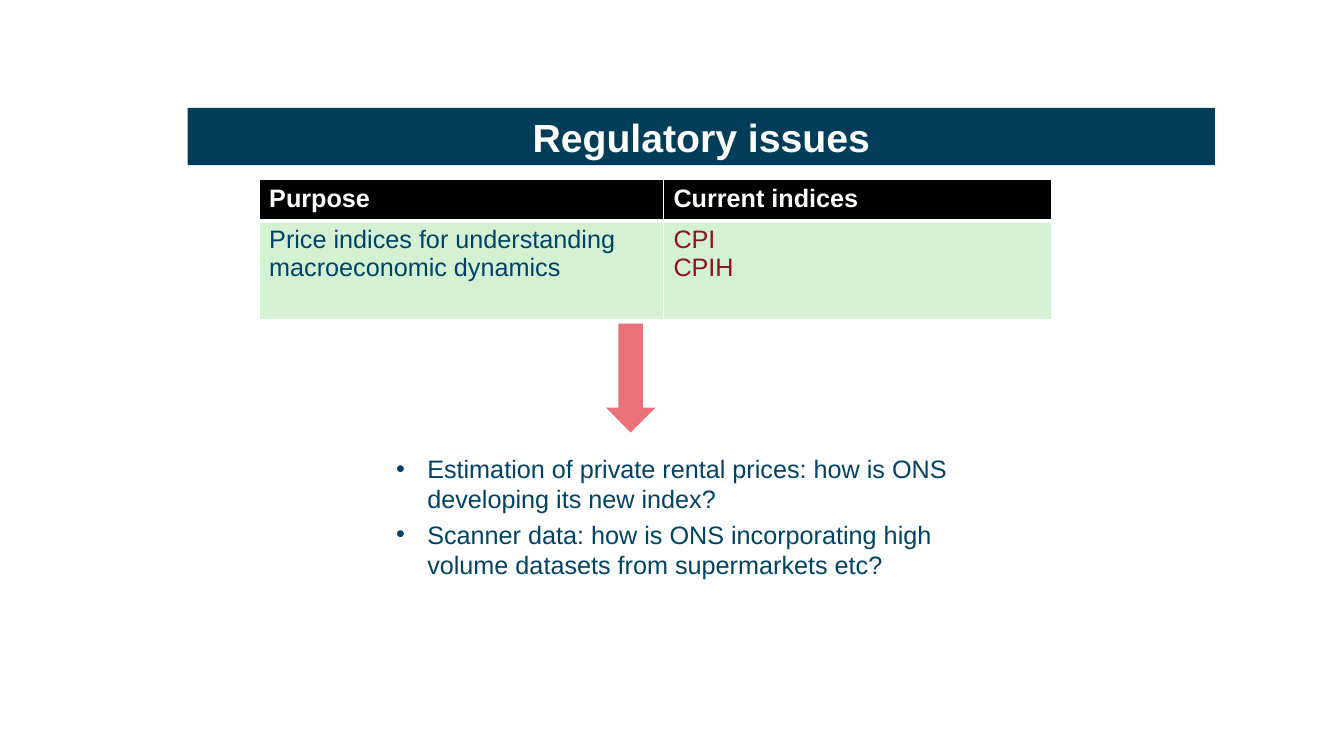
from lxml.etree import SubElement
from pptx import Presentation
from pptx.dml.color import RGBColor
from pptx.enum.shapes import MSO_SHAPE as SHAPE
from pptx.enum.text import MSO_ANCHOR as ANCHOR, PP_ALIGN as ALIGN
from pptx.oxml.ns import qn
from pptx.util import Inches, Pt

WHITE, NAVY, BLUE, RED = "FFFFFF", "003D59", "004366", "8B151D"


def color(value):
    return RGBColor.from_string(value)


def style(p, size, value, bold=False):
    for r in p.runs:
        r.font.name = "Arial"
        r.font.size = Pt(size)
        r.font.bold = bold
        r.font.color.rgb = color(value)


def add_block(s, kind, box, fill):
    sp = s.shapes.add_shape(kind, *map(Inches, box))
    sp.shadow.inherit = False
    sp.fill.solid()
    sp.fill.fore_color.rgb = color(fill)
    sp.line.fill.background()
    return sp


def add_title(s, text, box):
    tf = add_block(s, SHAPE.RECTANGLE, box, NAVY).text_frame
    tf.text = text
    tf.word_wrap = True
    tf.vertical_anchor = ANCHOR.MIDDLE
    p = tf.paragraphs[0]
    p.alignment = ALIGN.CENTER
    style(p, 28, WHITE, True)


def add_borders(cell, widths):
    tcPr = cell._tc.get_or_add_tcPr()
    for side, width in widths.items():
        ln = SubElement(tcPr, qn(f"a:ln{side}"), w=str(Pt(width)))
        fill = SubElement(ln, qn("a:solidFill"))
        SubElement(fill, qn("a:srgbClr"), val=WHITE)


def fill_cell(cell, text, value, fill, borders, bold):
    cell.text = text
    for p in cell.text_frame.paragraphs:
        style(p, 18, value, bold)
    add_borders(cell, borders)
    cell.fill.solid()
    cell.fill.fore_color.rgb = color(fill)


def add_purpose_table(s, left, top, widths, heights):
    table = s.shapes.add_table(
        2, 2, Inches(left), Inches(top), Inches(sum(widths)), Inches(sum(heights))
    ).table
    for column, width in zip(table.columns, widths):
        column.width = Inches(width)
    for row, height in zip(table.rows, heights):
        row.height = Inches(height)
    for i, heading in enumerate(["Purpose", "Current indices"]):
        fill_cell(table.cell(0, i), heading, WHITE, "000000",
                  {"L": 1, "R": 1, "T": 1, "B": 3}, True)
    body = [("Price indices for understanding macroeconomic dynamics", BLUE),
            ("CPI\nCPIH", RED)]
    for i, (text, value) in enumerate(body):
        fill_cell(table.cell(1, i), text, value, "D4F2D3",
                  {"L": 1, "R": 1, "T": 3, "B": 1}, False)


def add_bullets(s, items, box):
    tf = s.shapes.add_textbox(*map(Inches, box)).text_frame
    tf.word_wrap = True
    tf.text = "\n".join(items)
    for i, p in enumerate(tf.paragraphs):
        pPr = p._p.get_or_add_pPr()
        pPr.set("marL", str(Inches(0.81)))
        pPr.set("indent", str(Inches(-0.31)))
        if i:
            p.space_before = Pt(3.6)
        SubElement(pPr, qn("a:buFont"), typeface="Arial")
        SubElement(pPr, qn("a:buChar"), char="•")
        style(p, 18, BLUE)


def main():
    prs = Presentation()
    prs.slide_width, prs.slide_height = Inches(13.33), Inches(7.5)
    s = prs.slides.add_slide(prs.slide_layouts[6])
    add_title(s, "Regulatory issues", (1.86, 1.07, 10.19, 0.57))
    add_purpose_table(s, 2.57, 1.78, [4.01, 3.85], [0.41, 0.98])
    add_block(s, SHAPE.DOWN_ARROW, (6.01, 3.21, 0.49, 1.08), "E9717A")
    add_bullets(s, [
        "Estimation of private rental prices: how is ONS developing its new index?",
        "Scanner data: how is ONS incorporating high volume datasets from supermarkets etc?",
    ], (3.33, 4.45, 6.67, 1.37))
    prs.save("out.pptx")


if __name__ == "__main__":
    main()
